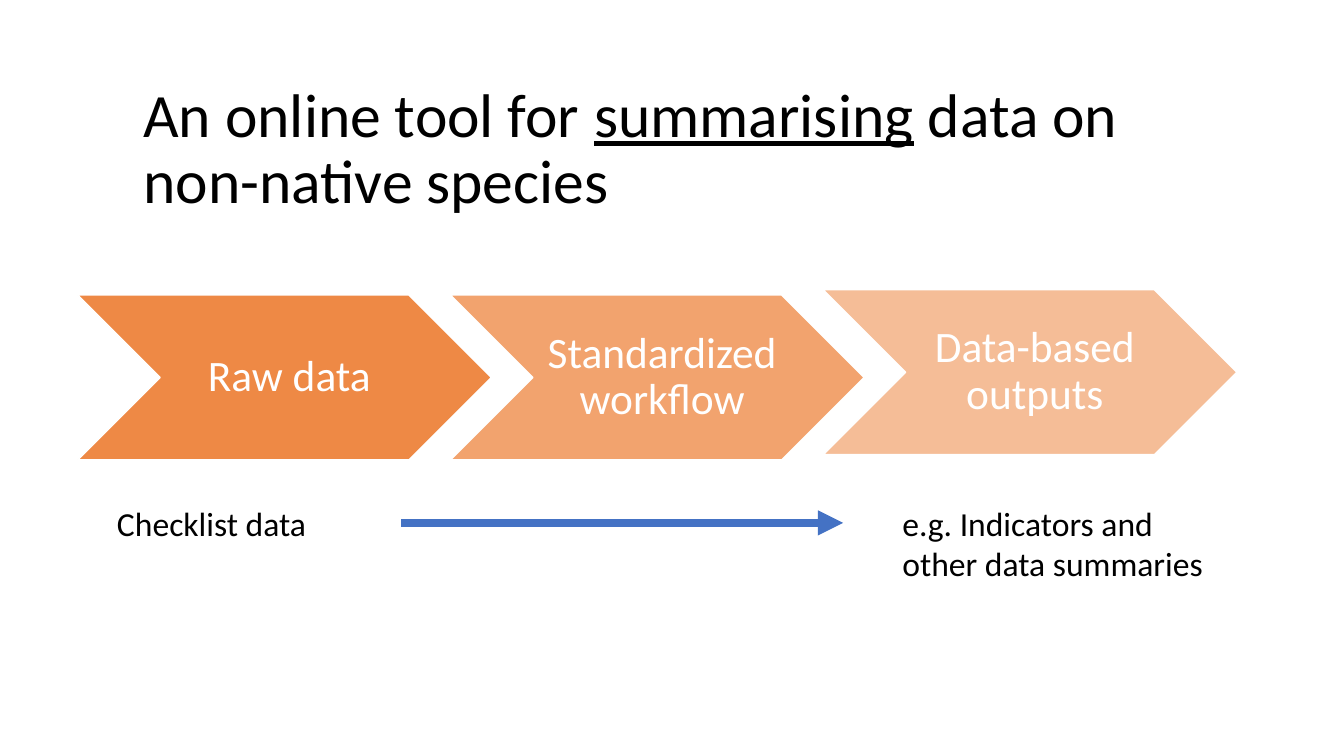
from dataclasses import dataclass

from lxml.etree import SubElement
from pptx import Presentation
from pptx.dml.color import RGBColor
from pptx.enum.shapes import MSO_CONNECTOR, MSO_SHAPE
from pptx.enum.text import MSO_ANCHOR, PP_ALIGN
from pptx.oxml.ns import qn
from pptx.slide import Slide
from pptx.text.text import TextFrame
from pptx.util import Emu, Pt

PX = 9525
FONT = "Calibri"
COLOURS = {"text": "000000", "light": "FFFFFF", "step": "ED7D31", "arrow": "4472C4"}
STEP_LEFT, STEP_PITCH, STEP_WIDTH, STEP_HEIGHT = 74, 355, 394, 157


@dataclass(frozen=True)
class Run:
    text: str
    underline: bool = False


@dataclass(frozen=True)
class Step:
    label: str
    top: int
    opacity: int


@dataclass(frozen=True)
class Caption:
    runs: tuple[Run, ...]
    left: int
    top: int
    width: int
    height: int
    size: int = 24
    spacing: float = 1.0
    anchor: MSO_ANCHOR = MSO_ANCHOR.TOP


STEPS = (
    Step("Raw data", 281, 90),
    Step("Standardized workflow", 281, 70),
    Step("Data-based outputs", 276, 50),
)
CAPTIONS = (
    Caption(
        (Run("An online tool for "), Run("summarising", True), Run(" data on non-native species")),
        127, 74, 1001, 139, 44, 0.9, MSO_ANCHOR.MIDDLE,
    ),
    Caption((Run("Checklist data"),), 102, 474, 431, 48),
    Caption((Run("e.g. Indicators and other data summaries"),), 850, 474, 328, 87),
)


def px(length: int) -> Emu:
    return Emu(length * PX)


def rgb(name: str) -> RGBColor:
    return RGBColor.from_string(COLOURS[name])


def write(frame: TextFrame, runs: tuple[Run, ...], size: int, colour: str, spacing: float) -> None:
    frame.word_wrap = True
    paragraph = frame.paragraphs[0]
    paragraph.line_spacing = spacing
    for part in runs:
        run = paragraph.add_run()
        run.text = part.text
        run.font.name = FONT
        run.font.size = Pt(size)
        run.font.color.rgb = rgb(colour)
        run.font.underline = part.underline


def draw_caption(slide: Slide, caption: Caption) -> None:
    box = slide.shapes.add_textbox(
        px(caption.left), px(caption.top), px(caption.width), px(caption.height)
    )
    box.text_frame.vertical_anchor = caption.anchor
    write(box.text_frame, caption.runs, caption.size, "text", caption.spacing)


def draw_step(slide: Slide, step: Step, left: int) -> None:
    chevron = slide.shapes.add_shape(
        MSO_SHAPE.CHEVRON, px(left), px(step.top), px(STEP_WIDTH), px(STEP_HEIGHT)
    )
    chevron.shadow.inherit = False
    chevron.fill.solid()
    chevron.fill.fore_color.rgb = rgb("step")
    tint = chevron.fill._xPr.find(qn("a:solidFill"))[0]
    SubElement(tint, qn("a:alpha")).set("val", str(step.opacity * 1000))
    chevron.line.color.rgb = rgb("light")
    chevron.line.width = Pt(1)
    frame = chevron.text_frame
    frame.vertical_anchor = MSO_ANCHOR.MIDDLE
    frame.margin_left = px(13)
    frame.margin_top = frame.margin_right = frame.margin_bottom = px(4)
    write(frame, (Run(step.label),), 31, "light", 0.9)
    frame.paragraphs[0].alignment = PP_ALIGN.CENTER


def draw_arrow(slide: Slide, start: int, end: int, level: int) -> None:
    arrow = slide.shapes.add_connector(
        MSO_CONNECTOR.STRAIGHT, px(start), px(level), px(end), px(level)
    )
    arrow.line.color.rgb = rgb("arrow")
    arrow.line.width = Pt(6)
    SubElement(arrow.line._get_or_add_ln(), qn("a:tailEnd")).set("type", "triangle")
    SubElement(arrow._element.spPr, qn("a:effectLst"))


def main() -> None:
    deck = Presentation()
    deck.slide_width, deck.slide_height = px(1280), px(720)
    slide = deck.slides.add_slide(deck.slide_layouts[6])
    for index, step in enumerate(STEPS):
        draw_step(slide, step, STEP_LEFT + index * STEP_PITCH)
    for caption in CAPTIONS:
        draw_caption(slide, caption)
    draw_arrow(slide, 382, 803, 498)
    deck.save("out.pptx")


if __name__ == "__main__":
    main()
